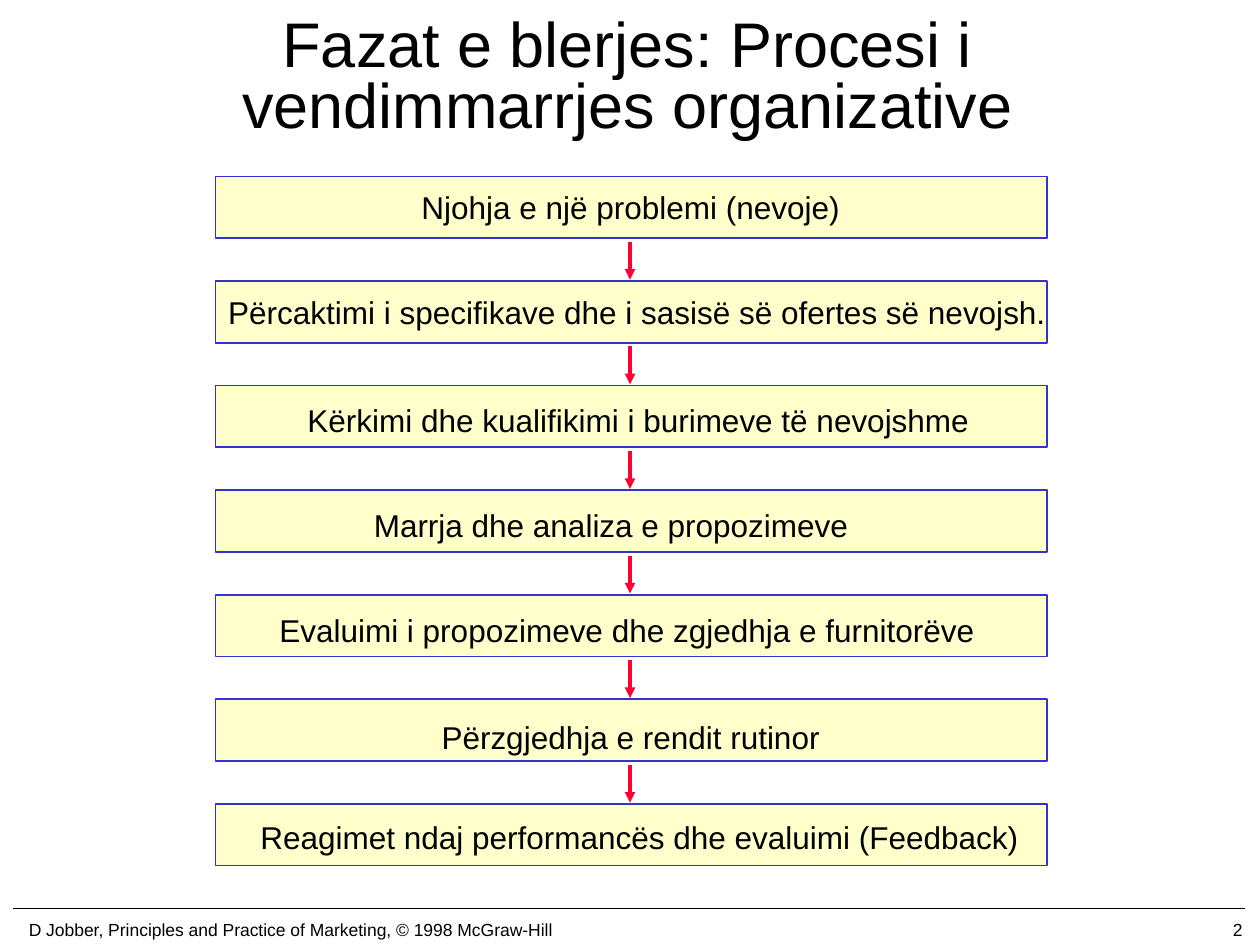
from dataclasses import dataclass
from lxml.etree import SubElement
from pptx import Presentation
from pptx.dml.color import RGBColor
from pptx.enum.shapes import MSO_CONNECTOR, MSO_SHAPE
from pptx.enum.text import MSO_ANCHOR, PP_ALIGN
from pptx.oxml.ns import qn
from pptx.util import Inches, Pt


@dataclass(frozen=True)
class Theme:
    font: str = "Arial"
    ink: str = "000000"
    box_fill: str = "FFFFCC"
    box_line: str = "3333CC"
    arrow: str = "FF0033"
    title_size: int = 36
    label_size: int = 18
    footer_size: int = 10
    thin: int = 1
    thick: int = 2


THEME = Theme()
TITLE = "Fazat e blerjes: Procesi i vendimmarrjes organizative"
FOOTER = "D Jobber, Principles and Practice of Marketing, © 1998 McGraw-Hill"
PAGE_NUMBER = "2"

# Phase, label left, label width, label offset below the top of its box
PHASES = [
    ("Njohja e një problemi (nevoje)", 3.21, 3.59, 0.04),
    ("Përcaktimi i specifikave dhe i sasisë së ofertes së nevojsh.", 1.68, 6.75, 0.05),
    ("Kërkimi dhe kualifikimi i burimeve të nevojshme", 2.27, 5.59, 0.07),
    ("Marrja dhe analiza e propozimeve", 2.85, 4, 0.08),
    ("Evaluimi i propozimeve dhe zgjedhja e furnitorëve", 2.07, 5.81, 0.08),
    ("Përzgjedhja e rendit rutinor", 3.25, 3.51, 0.1),
    ("Reagimet ndaj performancës dhe evaluimi (Feedback)", 1.92, 6.31, 0.06),
]
BOX_LEFT, BOX_TOP, BOX_WIDTH, BOX_HEIGHT = 1.71, 1.4, 6.6, 0.49
STEP, LABEL_HEIGHT = 0.83, 0.4
ARROW_X, ARROW_GAP, ARROW_LENGTH = 5, 0.03, 0.3


def add_text(page, text, left, top, width, height, *, size=THEME.label_size,
             align=PP_ALIGN.LEFT, anchor=MSO_ANCHOR.TOP, wrap=False, line_spacing=None):
    box = page.shapes.add_textbox(Inches(left), Inches(top), Inches(width), Inches(height))
    frame = box.text_frame
    frame.word_wrap = wrap
    frame.vertical_anchor = anchor
    para = frame.paragraphs[0]
    para.alignment = align
    para.line_spacing = line_spacing
    span = para.add_run()
    span.text = text
    span.font.name = THEME.font
    span.font.size = Pt(size)
    span.font.color.rgb = RGBColor.from_string(THEME.ink)


def add_line(page, start, end, *, color, width, arrow=False):
    line = page.shapes.add_connector(
        MSO_CONNECTOR.STRAIGHT, *(Inches(value) for value in (*start, *end)))
    line.line.color.rgb = RGBColor.from_string(color)
    line.line.width = Pt(width)
    if arrow:
        SubElement(line.line._get_or_add_ln(), qn("a:tailEnd"), type="triangle")
    SubElement(line._element.spPr, qn("a:effectLst"))


def add_phase_box(page, top):
    box = page.shapes.add_shape(MSO_SHAPE.RECTANGLE, Inches(BOX_LEFT), Inches(top),
                                Inches(BOX_WIDTH), Inches(BOX_HEIGHT))
    box.shadow.inherit = False
    box.fill.solid()
    box.fill.fore_color.rgb = RGBColor.from_string(THEME.box_fill)
    box.line.color.rgb = RGBColor.from_string(THEME.box_line)
    box.line.width = Pt(THEME.thin)


def add_footer(page):
    add_line(page, (0.1, 7.21), (9.88, 7.21), color=THEME.ink, width=THEME.thin)
    add_text(page, PAGE_NUMBER, 7.88, 7.25, 2.08, 0.25, size=THEME.footer_size,
             align=PP_ALIGN.RIGHT, anchor=MSO_ANCHOR.MIDDLE, wrap=True)
    add_text(page, FOOTER, 0, 7.25, 4.61, 0.25, size=THEME.footer_size,
             align=PP_ALIGN.CENTER, anchor=MSO_ANCHOR.MIDDLE)


def add_phases(page):
    for index, (text, left, width, offset) in enumerate(PHASES):
        top = BOX_TOP + index * STEP
        add_phase_box(page, top)
        add_text(page, text, left, top + offset, width, LABEL_HEIGHT, align=PP_ALIGN.CENTER)
        if index < len(PHASES) - 1:
            start = top + BOX_HEIGHT + ARROW_GAP
            add_line(page, (ARROW_X, start), (ARROW_X, start + ARROW_LENGTH),
                     color=THEME.arrow, width=THEME.thick, arrow=True)


def main():
    deck = Presentation()
    deck.slide_width, deck.slide_height = Inches(10), Inches(7.5)
    page = deck.slides.add_slide(deck.slide_layouts[6])
    add_footer(page)
    add_text(page, TITLE, 0.73, 0.01, 8.5, 1.25, size=THEME.title_size, wrap=True,
             align=PP_ALIGN.CENTER, anchor=MSO_ANCHOR.MIDDLE, line_spacing=0.8)
    add_phases(page)
    deck.save("out.pptx")


if __name__ == "__main__":
    main()
